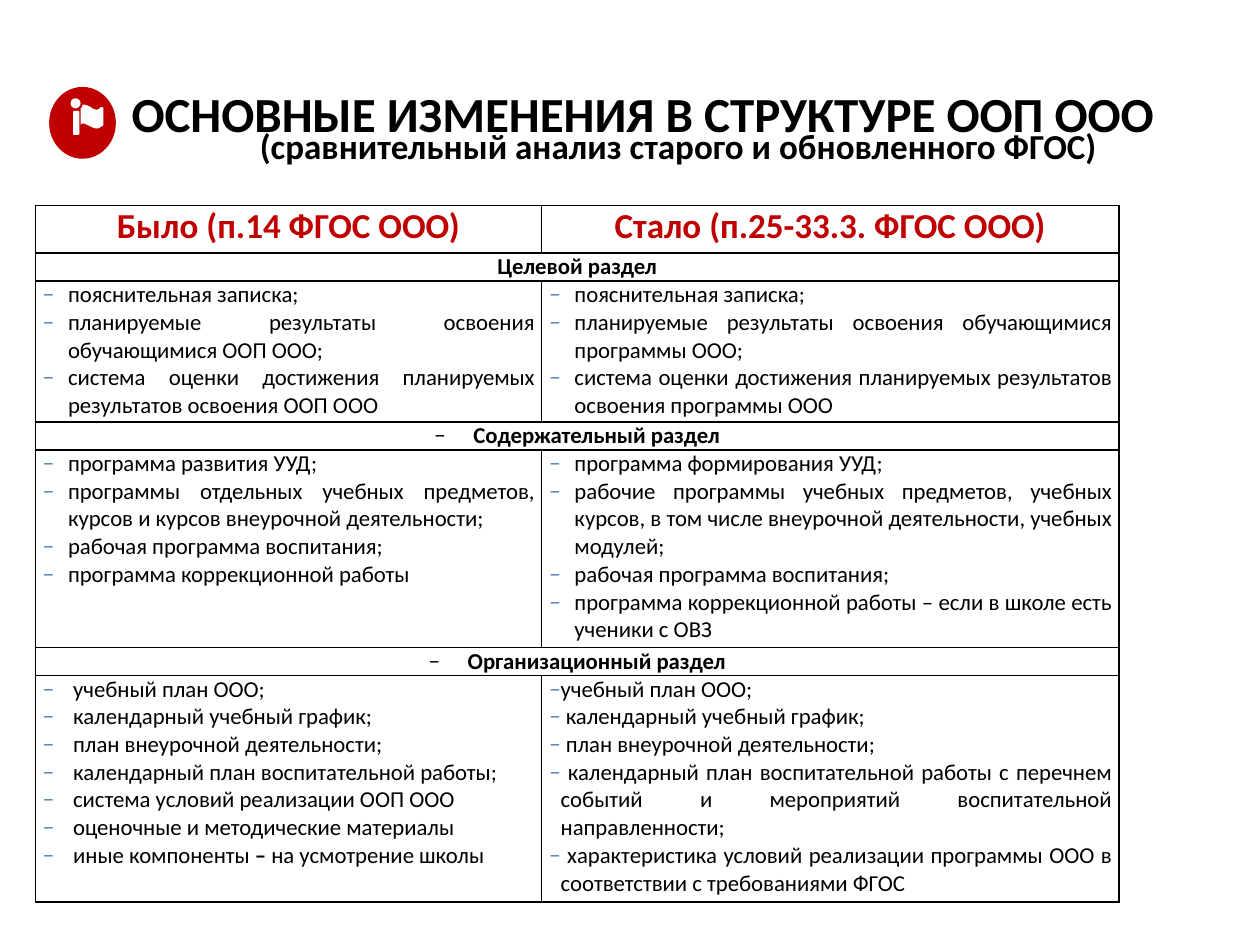
from lxml.etree import SubElement, fromstring
from pptx import Presentation
from pptx.dml.color import RGBColor
from pptx.enum.shapes import MSO_SHAPE as SHAPE
from pptx.enum.text import MSO_ANCHOR as ANCHOR, MSO_AUTO_SIZE as AUTOSIZE, PP_ALIGN as ALIGN
from pptx.oxml.ns import nsdecls, qn
from pptx.util import Inches, Pt

COLORS = {"text": "000000", "accent": "C00000", "bullet": "4F81BD", "icon": "FFFFFF"}
FONT = "Calibri"

COLUMNS = [4.02, 4.58]
ROWS = [0.38, 0.22, 1.12, 0.22, 1.57, 0.22, 1.8]
HEADERS = ["Было (п.14 ФГОС ООО)", "Стало (п.25-33.3. ФГОС ООО)"]

# Section name, old items, new items; a list item holds (text, bold) runs
SECTIONS = [
    ("Целевой раздел",
     ["пояснительная записка;",
      "планируемые результаты освоения обучающимися ООП ООО;",
      "система оценки достижения планируемых результатов освоения ООП ООО"],
     ["пояснительная записка;",
      "планируемые результаты освоения обучающимися программы ООО;",
      "система оценки достижения планируемых результатов освоения программы ООО"]),
    ("Содержательный раздел",
     ["программа развития УУД;",
      "программы отдельных учебных предметов, курсов и курсов внеурочной деятельности;",
      "рабочая программа воспитания;",
      "программа коррекционной работы"],
     ["программа формирования УУД;",
      "рабочие программы учебных предметов, учебных курсов, в том числе "
      "внеурочной деятельности, учебных модулей;",
      "рабочая программа воспитания;",
      "программа коррекционной работы – если в школе есть ученики с ОВЗ"]),
    ("Организационный раздел",
     [" учебный план ООО;",
      " календарный учебный график;",
      " план внеурочной деятельности;",
      " календарный план воспитательной работы;",
      " система условий реализации ООП ООО",
      " оценочные и методические материалы",
      [(" иные компоненты ", False), ("– ", True), ("на усмотрение школы", False)]],
     ["учебный план ООО;",
      " календарный учебный график;",
      " план внеурочной деятельности;",
      " календарный план воспитательной работы с перечнем событий и "
      "мероприятий воспитательной направленности;",
      " характеристика условий реализации программы ООО в соответствии "
      "с требованиями ФГОС"]),
]

# Flag outline: start point, then lines (one point) and curves (three points)
FLAG_START = (0.66, 0.83)
FLAG = [
    [(0.65, 0.84), (0.65, 0.86), (0.64, 0.86)], [(0.64, 0.99)],
    [(0.65, 0.98), (0.65, 0.98), (0.66, 0.98)],
    [(0.67, 0.98), (0.69, 0.99), (0.71, 1)],
    [(0.73, 1.01), (0.75, 1.02), (0.77, 1.02)],
    [(0.78, 1.02), (0.8, 1.01), (0.81, 1)],
    [(0.81, 1), (0.82, 1), (0.82, 0.99)], [(0.82, 0.86)],
    [(0.82, 0.85), (0.81, 0.85), (0.81, 0.85)],
    [(0.81, 0.85), (0.8, 0.85), (0.8, 0.85)],
    [(0.79, 0.86), (0.78, 0.87), (0.77, 0.87)],
    [(0.75, 0.87), (0.73, 0.86), (0.72, 0.85)],
    [(0.7, 0.84), (0.68, 0.83), (0.66, 0.83)],
]


def rgb(name):
    return RGBColor.from_string(COLORS[name])


def add_run(p, text, size, bold=False, color="text"):
    r = p.add_run()
    r.text = text
    for name, value in {"name": FONT, "size": Pt(size), "bold": bold}.items():
        setattr(r.font, name, value)
    r.font.color.rgb = rgb(color)


def add_bullet(p, indent, color):
    pPr = p._p.get_or_add_pPr()
    pPr.set("marL", str(Inches(indent)))
    pPr.set("indent", str(-Inches(indent)))
    clr = SubElement(pPr, qn("a:buClr"))
    SubElement(clr, qn("a:srgbClr"), val=COLORS[color])
    SubElement(pPr, qn("a:buFont"), typeface=FONT)
    SubElement(pPr, qn("a:buChar"), char="−")


def format_heading(sp, box, text, size):
    sp.left, sp.top, sp.width, sp.height = map(Inches, box)
    tf = sp.text_frame
    frame = {"word_wrap": False, "auto_size": AUTOSIZE.NONE, "vertical_anchor": ANCHOR.TOP}
    frame.update({f"margin_{side}": Inches(0.1) for side in ("left", "right", "top", "bottom")})
    for name, value in frame.items():
        setattr(tf, name, value)
    p = tf.paragraphs[0]
    p.alignment = ALIGN.CENTER
    add_run(p, text, size, bold=True)


def paint(sp, color):
    sp.shadow.inherit = False
    sp.fill.solid()
    sp.fill.fore_color.rgb = rgb(color)
    sp.line.fill.background()


def add_preset(shapes, kind, box, color):
    sp = shapes.add_shape(kind, *map(Inches, box))
    paint(sp, color)
    return sp


def curve_points(start, controls, steps=6):
    a, (b, c, d) = start, controls
    for t in (i / steps for i in range(1, steps + 1)):
        u = 1 - t
        yield tuple(u**3 * a[k] + 3 * u * u * t * b[k] + 3 * u * t * t * c[k] + t**3 * d[k]
                    for k in (0, 1))


def add_flag(shapes):
    points, last = [], FLAG_START
    for segment in FLAG:
        points += segment if len(segment) == 1 else curve_points(last, segment)
        last = segment[-1]
    builder = shapes.build_freeform(*map(Inches, FLAG_START), scale=1.0)
    builder.add_line_segments([(Inches(x), Inches(y)) for x, y in points], close=True)
    paint(builder.convert_to_shape(), "icon")


def add_icon(shapes):
    add_preset(shapes, SHAPE.OVAL, (0.39, 0.69, 0.53, 0.57), "accent")
    add_preset(shapes, SHAPE.OVAL, (0.56, 0.78, 0.08, 0.08), "icon")
    add_preset(shapes, SHAPE.ROUNDED_RECTANGLE, (0.58, 0.88, 0.05, 0.19), "icon")
    add_flag(shapes)


def format_cell(cell, side_margin):
    cell.fill.background()
    margins = {"margin_left": side_margin, "margin_right": side_margin,
               "margin_top": 0, "margin_bottom": 0}
    for name, value in margins.items():
        setattr(cell, name, Inches(value))
    tcPr = cell._tc.get_or_add_tcPr()
    for i, side in enumerate("LRTB"):
        tcPr.insert(i, fromstring(
            f'<a:ln{side} {nsdecls("a")} w="{Pt(1)}"><a:solidFill>'
            f'<a:srgbClr val="{COLORS["text"]}"/></a:solidFill></a:ln{side}>'))


def fill_heading(cell, text, size, color="text", bullet=False):
    p = cell.text_frame.paragraphs[0]
    p.alignment = ALIGN.CENTER
    if bullet:
        add_bullet(p, 0.31, "text")
    add_run(p, text, size, True, color)


def fill_list(cell, items, indent):
    tf = cell.text_frame
    for i, item in enumerate(items):
        p = tf.add_paragraph() if i else tf.paragraphs[0]
        p.alignment = ALIGN.JUSTIFY
        add_bullet(p, indent, "bullet")
        for text, bold in [(item, False)] if isinstance(item, str) else item:
            add_run(p, text, 13, bold)


def add_comparison(shapes):
    table = shapes.add_table(len(ROWS), len(COLUMNS), Inches(0.28), Inches(1.63),
                             Inches(sum(COLUMNS)), Inches(sum(ROWS))).table
    table.first_row = table.horz_banding = False
    for column, width in zip(table.columns, COLUMNS):
        column.width = Inches(width)
    for i, (row, height) in enumerate(zip(table.rows, ROWS)):
        row.height = Inches(height)
        for cell in row.cells:
            format_cell(cell, 0.06 if i and i % 2 == 0 else 0.01)

    for col, text in enumerate(HEADERS):
        fill_heading(table.cell(0, col), text, 20, "accent")
    for i, (name, old, new) in enumerate(SECTIONS):
        row = 2 * i + 1
        table.cell(row, 0).merge(table.cell(row, 1))
        fill_heading(table.cell(row, 0), name, 13, bullet=i > 0)
        fill_list(table.cell(row + 1, 0), old, 0.2)
        fill_list(table.cell(row + 1, 1), new, 0.09 if i == 2 else 0.2)


def main():
    prs = Presentation()
    prs.slide_width, prs.slide_height = Inches(10), Inches(7.5)
    s = prs.slides.add_slide(prs.slide_layouts[5])

    # Comparison table
    add_comparison(s.shapes)

    # Title and subtitle
    format_heading(s.shapes.title, (0.93, 0.56, 8.34, 0.32),
                   "ОСНОВНЫЕ ИЗМЕНЕНИЯ В СТРУКТУРЕ ООП ООО", 28)
    box = (0.93, 0.89, 8.91, 0.28)
    format_heading(s.shapes.add_textbox(*map(Inches, box)), box,
                   "(сравнительный анализ старого и обновленного ФГОС)", 20)

    # Round icon with a flag bearer
    add_icon(s.shapes)
    prs.save("out.pptx")


if __name__ == "__main__":
    main()
